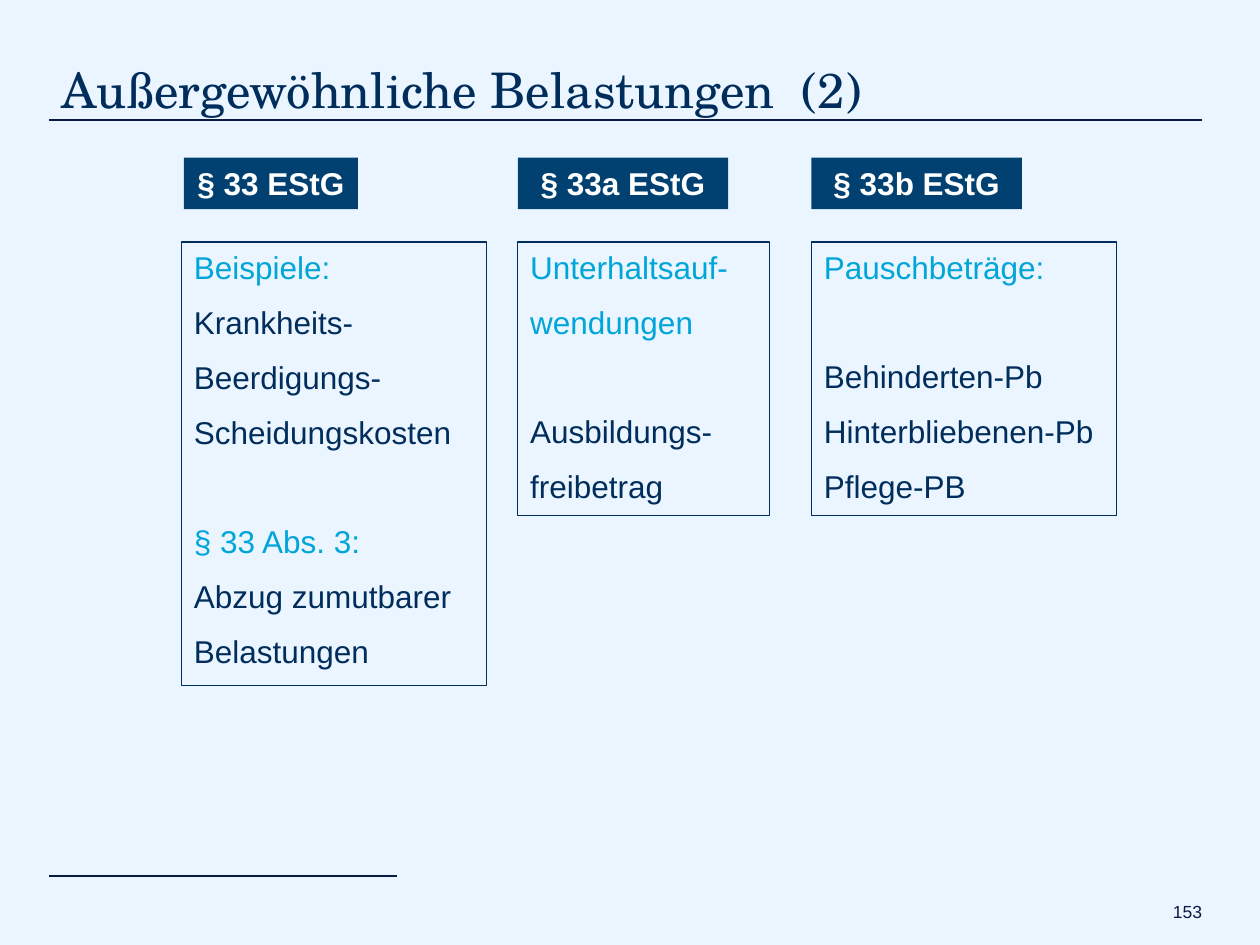
from pptx import Presentation, util as u
from pptx.dml.color import RGBColor
from pptx.enum import shapes, text
from lxml import etree

PALE = RGBColor(0xEB, 0xF5, 0xFF)
NAVY = RGBColor(0x00, 0x2D, 0x5B)
INK = RGBColor(0x0B, 0x1A, 0x40)
BLUE = RGBColor(0x00, 0x41, 0x71)
CYAN = RGBColor(0x00, 0xA5, 0xD9)
WHITE = RGBColor(0xFF, 0xFF, 0xFF)

deck = Presentation()
deck.slide_width, deck.slide_height = u.Inches(10), u.Inches(7.5)
slide = deck.slides.add_slide(deck.slide_layouts[5])
slide.background.fill.solid()
slide.background.fill.fore_color.rgb = PALE


def area(x, y, w, h):
    """Turn percentages of the slide's width and height into lengths."""
    wide, high = deck.slide_width / 100, deck.slide_height / 100
    return [int(n) for n in (x * wide, y * high, w * wide, h * high)]


def write(para, words, size, color, font="Arial", bold=False):
    run = para.add_run()
    run.text = words
    run.font.size, run.font.name, run.font.bold = u.Pt(size), font, bold
    run.font.color.rgb = color
    return run


LEFT, WIDE = 3.9, 91.5

# Rules under the title and above the footer
for y, w in ((12.67, WIDE), (92.67, 27.6)):
    x, top, span, _ = area(LEFT, y, w, 0)
    rule = slide.shapes.add_connector(
        shapes.MSO_CONNECTOR.STRAIGHT, x, top, x + span, top)
    rule.line.color.rgb, rule.line.width = INK, u.Pt(1)
    etree.SubElement(
        rule._element.spPr,
        "{http://schemas.openxmlformats.org/drawingml/2006/main}effectLst")

# Title, with a widened gap before the number
title = slide.shapes.title
title.left, title.top, title.width, title.height = area(LEFT, 5.2, WIDE, 8.4)
frame = title.text_frame
frame.vertical_anchor = text.MSO_ANCHOR.MIDDLE
head = frame.paragraphs[0]
head.alignment = text.PP_ALIGN.LEFT
for words, gap in (("Außergewöhnliche Belastungen", 0), (" ", 780), ("(2)", 0)):
    run = write(head, words, 28, NAVY, "TeX Gyre Schola")
    run._r.get_or_add_rPr().set("spc", str(gap))

# Page number
page = slide.shapes.add_textbox(*area(71.8, 93.87, 23.6, 3.73)).text_frame
page.margin_left = page.margin_right = page.margin_top = page.margin_bottom = 0
page.word_wrap = True
page.vertical_anchor = text.MSO_ANCHOR.BOTTOM
page.paragraphs[0].alignment = text.PP_ALIGN.RIGHT
write(page.paragraphs[0], "153", 10, INK)

# Columns: label (left, width), box (left, width, height),
# then groups of lines as (cyan lines, navy lines, gap above navy lines)
STEP, BREAK = 9.9, 40.5
cols = [
    ("§ 33 EStG", (14.6, 13.8), (14.4, 24.2, 46.93), [
        ("Beispiele:", CYAN, 0), ("Krankheits-", NAVY, STEP),
        ("Beerdigungs-", NAVY, STEP), ("Scheidungskosten", NAVY, STEP),
        ("§ 33 Abs. 3:", CYAN, BREAK), ("Abzug zumutbarer", NAVY, STEP),
        ("Belastungen", NAVY, STEP)]),
    ("§ 33a EStG", (41.1, 16.7), (41.1, 20, 28.93), [
        ("Unterhaltsauf-", CYAN, 0), ("wendungen", CYAN, STEP),
        ("Ausbildungs-", NAVY, BREAK), ("freibetrag", NAVY, STEP)]),
    ("§ 33b EStG", (64.4, 16.7), (64.4, 24.2, 28.93), [
        ("Pauschbeträge:", CYAN, 0), ("Behinderten-Pb", NAVY, BREAK),
        ("Hinterbliebenen-Pb", NAVY, STEP), ("Pflege-PB", NAVY, STEP)]),
]
RECT = shapes.MSO_SHAPE.RECTANGLE
for name, (x, w), (left, wide, high), lines in cols:
    # Filled label
    label = slide.shapes.add_shape(RECT, *area(x, 16.67, w, 5.47))
    label.shadow.inherit = False
    label.fill.solid()
    label.fill.fore_color.rgb = BLUE
    label.line.fill.background()
    label.text_frame.word_wrap = False
    label.text_frame.vertical_anchor = text.MSO_ANCHOR.MIDDLE
    label.text_frame.paragraphs[0].alignment = text.PP_ALIGN.CENTER
    write(label.text_frame.paragraphs[0], name, 18, WHITE, bold=True)

    # Outlined box
    box = slide.shapes.add_shape(RECT, *area(left, 25.6, wide, high))
    box.shadow.inherit = False
    box.fill.background()
    box.line.color.rgb, box.line.width = NAVY, u.Pt(0.75)
    frame = box.text_frame
    frame.word_wrap = True
    frame.vertical_anchor = text.MSO_ANCHOR.TOP
    frame.margin_bottom = 0
    for i, (words, color, gap) in enumerate(lines):
        para = frame.add_paragraph() if i else frame.paragraphs[0]
        para.alignment = text.PP_ALIGN.LEFT
        para.space_before = u.Pt(gap)
        write(para, words, 18, color)

deck.save("out.pptx")
